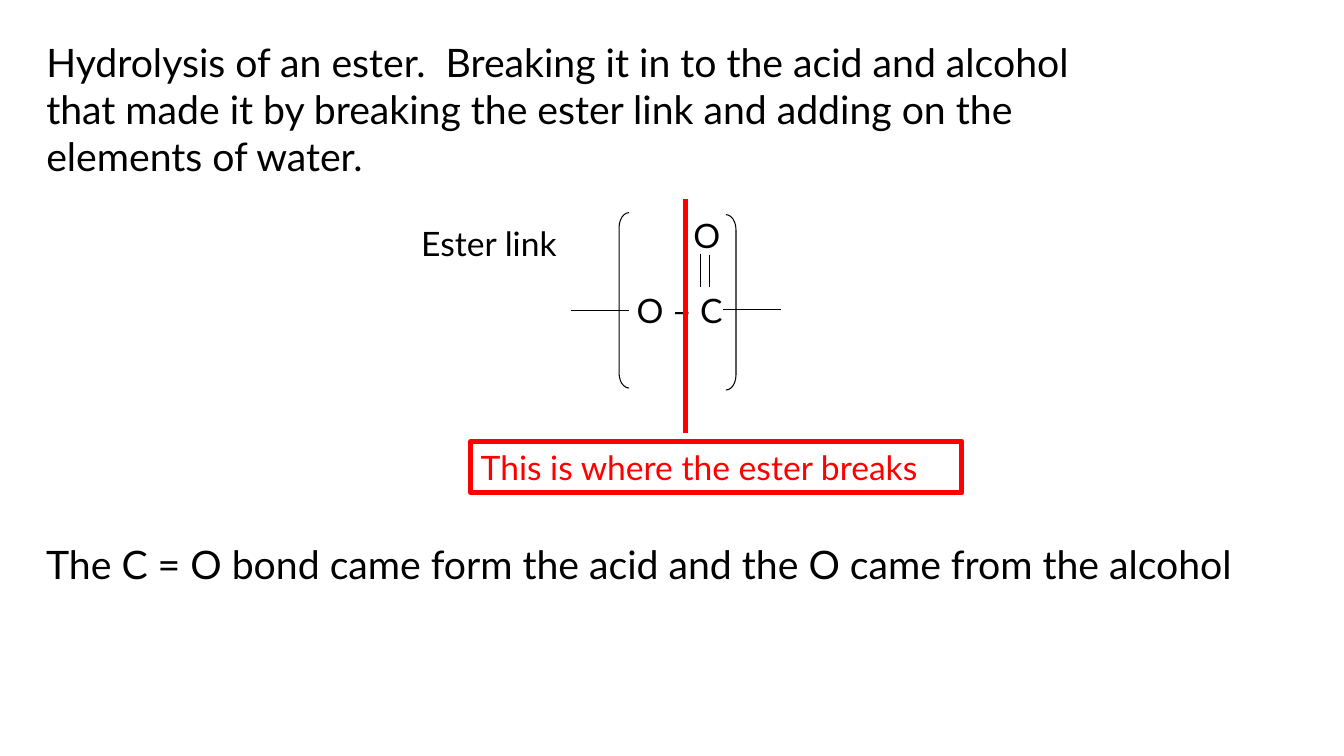
from pptx import Presentation
from pptx.dml.color import RGBColor
from pptx.enum.shapes import MSO_CONNECTOR, MSO_SHAPE
from pptx.enum.text import MSO_ANCHOR, MSO_AUTO_SIZE, PP_ALIGN
from pptx.oxml.ns import qn
from pptx.util import Inches, Pt
from lxml import etree

BLACK = RGBColor(0x00, 0x00, 0x00)
WHITE = RGBColor(0xFF, 0xFF, 0xFF)
RED = RGBColor(0xFF, 0x00, 0x00)
FONT = "Lato"
STRAIGHT = MSO_CONNECTOR.STRAIGHT
RECTANGLE = MSO_SHAPE.RECTANGLE
LEFT_BRACKET, RIGHT_BRACKET = MSO_SHAPE.LEFT_BRACKET, MSO_SHAPE.RIGHT_BRACKET
TOP, LEFT = MSO_ANCHOR.TOP, PP_ALIGN.LEFT
FIT_SHAPE = MSO_AUTO_SIZE.SHAPE_TO_FIT_TEXT
TITLE_ONLY = 5
THIN, THICK = 0.75, 3.75

TITLE = ("Hydrolysis of an ester.  Breaking it in to the acid and alcohol that made it "
         "by breaking the ester link and adding on the elements of water.")
TITLE_AREA = (0.36, 0.33, 10.72, 1.5)
CONCLUSION = "The C = O bond came form the acid and the O came from the alcohol"
CONCLUSION_AREA = (0.36, 5.31, 12.81, 0.57)
LINK_LABEL = ("Ester link", (4.08, 2.16, 1.83, 0.51))
ATOMS = [
    (" O – C", (6.13, 2.83, 1.96, 0.51)),
    ("O", (6.78, 2.08, 0.47, 0.51)),
]
BONDS = [
    ((7.04, 2.53), (7.04, 2.85)),
    ((6.95, 2.52), (6.95, 2.85)),
    ((5.66, 3.08), (6.24, 3.08)),
    ((7.17, 3.07), (7.75, 3.07)),
]
BRACKETS = [
    (RIGHT_BRACKET, (7.2, 2.13, 0.1, 1.74)),
    (LEFT_BRACKET, (6.14, 2.11, 0.1, 1.74)),
]
BRACKET_CURVE = 1.49
BREAK_LINE = ((6.8, 1.97), (6.8, 4.3))
BREAK_NOTE = ("This is where the ester breaks", (4.67, 4.38, 4.87, 0.51))


def write(box, text, size=24, color=BLACK):
    """Fill a box with one left-aligned paragraph."""
    frame = box.text_frame
    frame.word_wrap = True
    frame.auto_size = FIT_SHAPE
    frame.vertical_anchor = TOP
    para = frame.paragraphs[0]
    para.alignment = LEFT
    span = para.add_run()
    span.text = text
    span.font.name = FONT
    span.font.size = Pt(size)
    span.font.color.rgb = color


def add_text(shapes, text, area, **style):
    """Add a text box."""
    write(shapes.add_textbox(*map(Inches, area)), text, **style)


def add_outline(shapes, kind, area, color=BLACK, width=THIN):
    """Add an unfilled preset shape."""
    shape = shapes.add_shape(kind, *map(Inches, area))
    shape.shadow.inherit = False
    shape.fill.background()
    shape.line.color.rgb = color
    shape.line.width = Pt(width)
    return shape


def add_line(shapes, start, end, color=BLACK, width=THIN):
    """Add a straight line without a shadow."""
    line = shapes.add_connector(STRAIGHT, *map(Inches, start + end))
    line.line.color.rgb = color
    line.line.width = Pt(width)
    etree.SubElement(line._element.spPr, qn("a:effectLst"))


def draw_ester_link(shapes):
    """Draw the bracketed ester link with its label."""
    for text, area in ATOMS:
        write(add_outline(shapes, RECTANGLE, area, color=WHITE), text)
    for kind, area in BRACKETS:
        add_outline(shapes, kind, area).adjustments[0] = BRACKET_CURVE
    for start, end in BONDS:
        add_line(shapes, start, end)
    add_text(shapes, *LINK_LABEL)


def draw_break(shapes):
    """Draw the red cut through the link and its note."""
    add_line(shapes, *BREAK_LINE, color=RED, width=THICK)
    text, area = BREAK_NOTE
    write(add_outline(shapes, RECTANGLE, area, color=RED, width=THICK), text, color=RED)


def main():
    """Build the slide and save it."""
    deck = Presentation()
    deck.slide_width, deck.slide_height = Inches(13.33), Inches(7.5)
    page = deck.slides.add_slide(deck.slide_layouts[TITLE_ONLY])
    title = page.shapes.title
    title.left, title.top, title.width, title.height = map(Inches, TITLE_AREA)
    write(title, TITLE, size=28)
    draw_ester_link(page.shapes.add_group_shape().shapes)
    draw_break(page.shapes.add_group_shape().shapes)
    add_text(page.shapes, CONCLUSION, CONCLUSION_AREA, size=28)
    deck.save("out.pptx")


if __name__ == "__main__":
    main()
